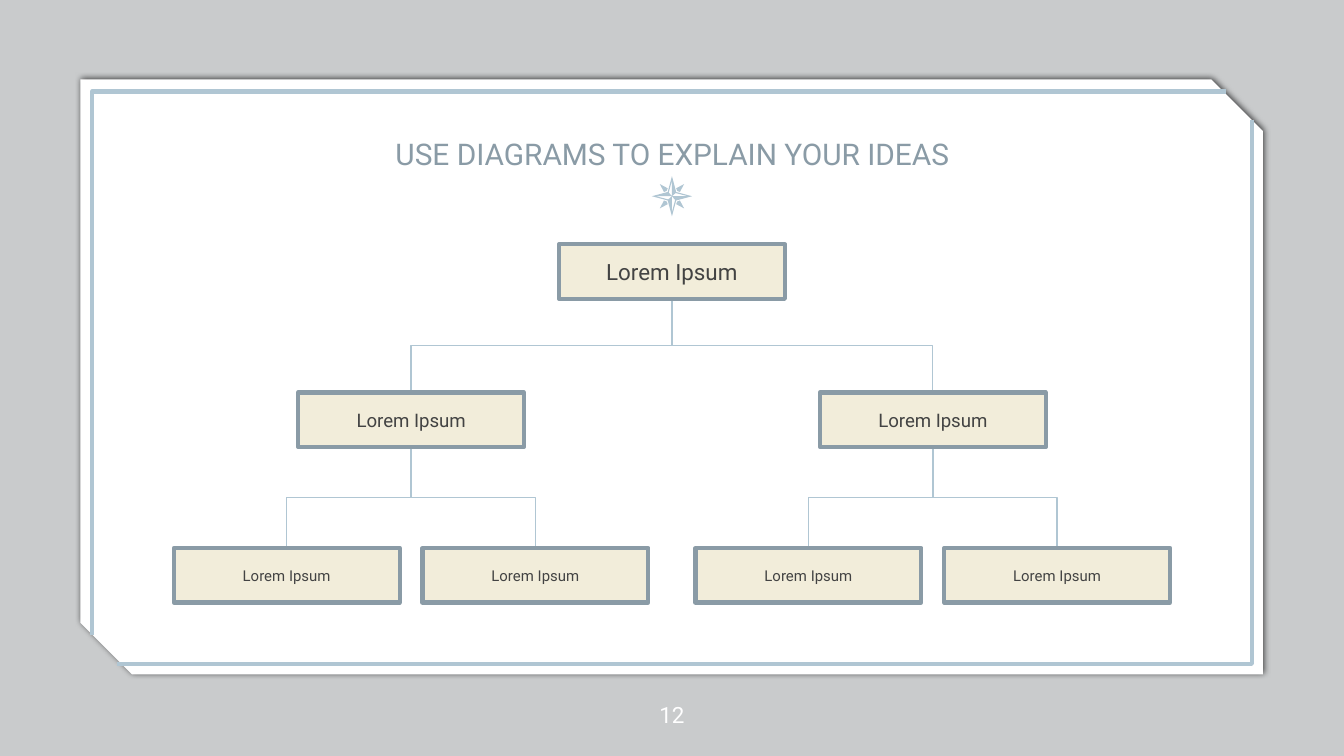
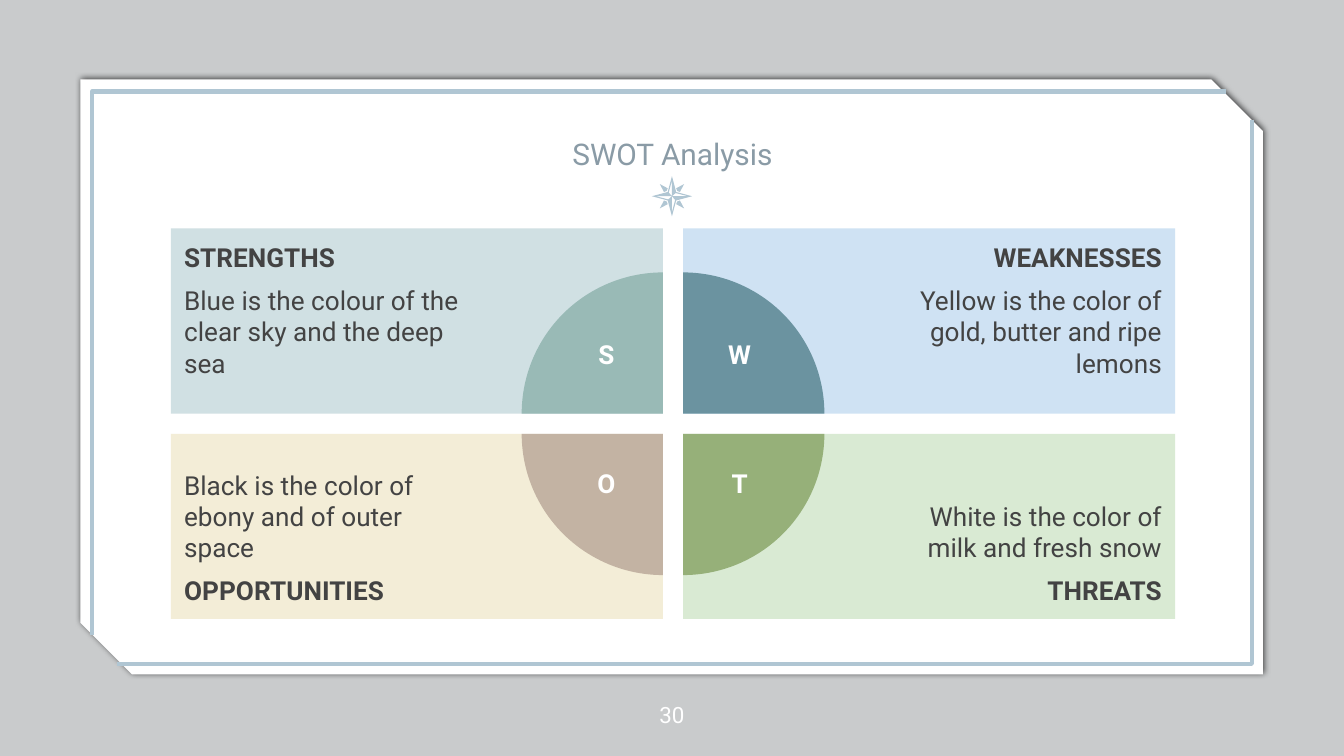
import pptx
import pptx.util
import pptx.dml.color
import pptx.enum.shapes
import pptx.enum.text
import pptx.oxml
import pptx.oxml.ns

Cm, Pt = pptx.util.Cm, pptx.util.Pt
SHAPE = pptx.enum.shapes.MSO_SHAPE
ALIGN = pptx.enum.text.PP_ALIGN
ANCHOR = pptx.enum.text.MSO_ANCHOR
qn = pptx.oxml.ns.qn

# Content
DIAGRAM_TITLE, DIAGRAM_NUMBER = "USE DIAGRAMS TO EXPLAIN YOUR IDEAS", 12
LEAF = ("Lorem Ipsum", [])
BRANCH = ("Lorem Ipsum", [LEAF, LEAF])
TREE = ("Lorem Ipsum", [BRANCH, BRANCH])

SWOT_TITLE, SWOT_NUMBER = "SWOT Analysis", 30
# letter, heading, text, card colour, quadrant colour, column, row, rotation
SWOT = [
    ("S", "STRENGTHS", "Blue is the colour of the clear sky and the deep sea",
     "D0E0E3", "99BAB6", 0, 0, 0),
    ("W", "WEAKNESSES", "Yellow is the color of gold, butter and ripe lemons",
     "CFE2F3", "6B93A0", 1, 0, 90),
    ("O", "OPPORTUNITIES", "Black is the color of ebony and of outer space",
     "F3EDD7", "C3B3A3", 0, 1, 270),
    ("T", "THREATS", "White is the color of milk and fresh snow",
     "D9EAD3", "96B079", 1, 1, 180),
]

# Shared style
FONT = "Roboto"
WHITE, INK, SLATE, SKY, CREAM, NIGHT = (
    "FFFFFF", "434343", "8A9BA6", "B0C6D3", "F2EDDA", "040E11")
WIDTH, HEIGHT, MIDDLE = 25.4, 14.29, 12.7

# Diagram measures: top, text size and sideways step to the children, by level
LEVELS = [(4.62, 12, 4.93), (7.42, 10, 2.35), (10.36, 8, 0)]
BOX_W, BOX_H = 4.27, 1.03

# SWOT measures
CARD_W, CARD_H, GAP = 9.3, 3.5, 0.38
GRID_LEFT, GRID_TOP = 3.23, 4.32
RADIUS = 2.67
LETTER_W, LETTER_H = 0.9, 0.92
LETTER_DX, LETTER_DY = 1.07, (1.13, 0.94)


def rgb(color):
    return pptx.dml.color.RGBColor.from_string(color)


def paint(shape, fill=None, line=None, weight=2.25):
    shape.shadow.inherit = False
    if fill:
        shape.fill.solid()
        shape.fill.fore_color.rgb = rgb(fill)
    else:
        shape.fill.background()
    if line:
        shape.line.color.rgb = rgb(line)
        shape.line.width = Pt(weight)
    else:
        shape.line.fill.background()


def add_part(slide, kind, left, top, width, height, **style):
    part = slide.shapes.add_shape(kind, Cm(left), Cm(top), Cm(width), Cm(height))
    paint(part, **style)
    return part


def add_outline(slide, contours, close=True, **style):
    """Draw one freeform from lists of points in cm."""
    contours = [[(Cm(x), Cm(y)) for x, y in points] for points in contours]
    builder = slide.shapes.build_freeform(*contours[0][0])
    for i, points in enumerate(contours):
        if i:
            builder.move_to(*points[0])
        builder.add_line_segments(points[1:], close=close)
    paint(builder.convert_to_shape(), **style)


def write(shape, *lines, size, color, bold=None, align=ALIGN.CENTER,
          anchor=ANCHOR.MIDDLE, insets=(0, 0, 0, 0), space=0):
    """Fill a shape with lines; the line equal to bold is set in bold."""
    frame = shape.text_frame
    frame.word_wrap = True
    frame.vertical_anchor = anchor
    (frame.margin_left, frame.margin_top,
     frame.margin_right, frame.margin_bottom) = map(Cm, insets)
    for i, line in enumerate(lines):
        paragraph = frame.add_paragraph() if i else frame.paragraphs[0]
        paragraph.alignment = align
        if i:
            paragraph.space_before = paragraph.space_after = Pt(space)
        run = paragraph.add_run()
        run.text = line
        run.font.name, run.font.size = FONT, Pt(size)
        run.font.bold = line == bold
        run.font.color.rgb = rgb(color)


def add_label(slide, text, left, top, width, height, **style):
    label = slide.shapes.add_textbox(Cm(left), Cm(top), Cm(width), Cm(height))
    write(label, text, **style)


def add_color_effect(parent, tag, color, alpha, **attributes):
    """Append an effect with a transparent colour to an effect list."""
    effect = pptx.oxml.parse_xml(
        f'<a:{tag} {pptx.oxml.ns.nsdecls("a")}><a:srgbClr val="{color}">'
        f'<a:alpha val="{alpha * 1000}"/></a:srgbClr></a:{tag}>')
    for key, value in attributes.items():
        effect.set(key, str(value))
    parent.append(effect)


def turn(points, quarters):
    for _ in range(quarters):
        points = [(-y, x) for x, y in points]
    return points


def add_compass(slide, x, y):
    def place(points):
        return [(x + px, y + py) for px, py in points]

    ray = [(-0.23, -0.23), (-0.15, -0.08), (-0.1, -0.1), (-0.08, -0.15)]
    for quarter in range(4):
        add_outline(slide, [place(turn(ray, quarter))], fill=SKY)
    tips = [(0, -0.38), (0.08, -0.08)]
    facet = [(0, -0.3), (0, 0), (-0.06, -0.07)]
    star = [point for q in range(4) for point in turn(tips, q)]
    facets = [place(turn(facet, q)) for q in range(4)]
    add_outline(slide, [place(star)] + facets, fill=SKY)


def new_slide(deck, title, number):
    slide = deck.slides.add_slide(deck.slide_layouts[6])
    # Grey wash
    wash = add_part(slide, SHAPE.RECTANGLE, 0, 0, WIDTH, HEIGHT, fill=NIGHT)
    tint = wash._element.spPr.find(qn("a:solidFill"))[0]
    tint.append(pptx.oxml.parse_xml(
        f'<a:alpha {pptx.oxml.ns.nsdecls("a")} val="21000"/>'))
    # Card with two cut corners and its frame
    card = add_part(slide, SHAPE.SNIP_2_DIAG_RECTANGLE,
                    1.52, 1.5, 22.35, 11.25, fill=WHITE)
    card.adjustments[0], card.adjustments[1] = 0, 0.087
    add_color_effect(card._element.spPr.find(qn("a:effectLst")), "outerShdw",
                     "000000", 68, blurRad=Pt(3.4), dist=Pt(0.8), dir=0)
    for corner in ([(1.74, 12), (1.74, 1.73), (23.18, 1.73)],
                   [(23.66, 2.26), (23.66, 12.55), (2.22, 12.55)]):
        add_outline(slide, [corner], close=False, line=SKY)
    add_compass(slide, MIDDLE, 3.71)
    # Title and slide number
    add_label(slide, title, 2.79, 1.73, 19.84, 1.52,
              size=16, color=SLATE, anchor=ANCHOR.BOTTOM)
    add_label(slide, str(number), MIDDLE - 0.76, 12.75, 1.52, 1.52,
              size=12, color=WHITE)
    return slide


def link_boxes(slide, parent, child):
    """Join parent and child by an elbow that leaves downwards."""
    link = slide.shapes.add_connector(
        pptx.enum.shapes.MSO_CONNECTOR.ELBOW, 0, 0, 0, 0)
    link.begin_connect(parent, 2)
    link.end_connect(child, 0)
    link.line.color.rgb = rgb(SKY)
    link.line.width = Pt(0.75)
    properties = link._element.spPr
    properties.append(pptx.oxml.parse_xml(
        f'<a:effectLst {pptx.oxml.ns.nsdecls("a")}/>'))
    # The elbow is laid out sideways, then turned about its centre
    start = parent.top + parent.height
    drop, shift = child.top - start, child.left - parent.left
    center_x = parent.left + (parent.width + shift) // 2
    link.left, link.top = center_x - drop // 2, start + (drop - abs(shift)) // 2
    link.width, link.height = drop, abs(shift)
    xfrm = properties.find(qn("a:xfrm"))
    xfrm.set("rot", "16200000" if shift > 0 else "5400000")
    xfrm.set("flipH", "1" if shift > 0 else "0")
    parent._element.addprevious(link._element)


def add_branch(slide, node, center, level=0):
    text, children = node
    top, size, step = LEVELS[level]
    box = add_part(slide, SHAPE.RECTANGLE, center - BOX_W / 2, top,
                   BOX_W, BOX_H, fill=CREAM, line=SLATE)
    write(box, text, size=size, color=INK, insets=[0.25] * 4)
    for i, child in enumerate(children):
        offset = step * (2 * i - len(children) + 1)
        link_boxes(slide, box,
                   add_branch(slide, child, center + offset, level + 1))
    return box


def add_swot(slide):
    # Cards
    for _, heading, text, card_color, _, column, row, _ in SWOT:
        card = add_part(slide, SHAPE.RECTANGLE,
                        GRID_LEFT + column * (CARD_W + GAP),
                        GRID_TOP + row * (CARD_H + GAP),
                        CARD_W, CARD_H, fill=card_color)
        lines = (text, heading) if row else (heading, text)
        write(card, *lines, size=14, color=INK, bold=heading, space=6,
              align=ALIGN.RIGHT if column else ALIGN.LEFT,
              anchor=ANCHOR.BOTTOM if row else ANCHOR.TOP,
              insets=(3.81, 0.25, 0.25, 0.25) if column
              else (0.25, 0.25, 3.81, 0.25))
    # Quadrants around the inner corners of the cards, then their letters
    corners = [(GRID_LEFT + CARD_W + column * GAP, GRID_TOP + CARD_H + row * GAP)
               for *_, column, row, _ in SWOT]
    for (x, y), (*_, color, _, _, rotation) in zip(corners, SWOT):
        quadrant = add_part(slide, SHAPE.PIE, x - RADIUS, y - RADIUS,
                            2 * RADIUS, 2 * RADIUS, fill=color)
        quadrant.adjustments[0], quadrant.adjustments[1] = 108, 162
        quadrant.rotation = rotation
    for (x, y), (letter, *_, column, row, _) in zip(corners, SWOT):
        add_label(slide, letter,
                  x + (2 * column - 1) * LETTER_DX - LETTER_W / 2,
                  y + (2 * row - 1) * LETTER_DY[row] - LETTER_H / 2,
                  LETTER_W, LETTER_H, size=14, color=WHITE, bold=letter)


def main():
    deck = pptx.Presentation()
    deck.slide_width, deck.slide_height = Cm(WIDTH), Cm(HEIGHT)
    add_branch(new_slide(deck, DIAGRAM_TITLE, DIAGRAM_NUMBER), TREE, MIDDLE)
    add_swot(new_slide(deck, SWOT_TITLE, SWOT_NUMBER))
    deck.save("out.pptx")


if __name__ == "__main__":
    main()
